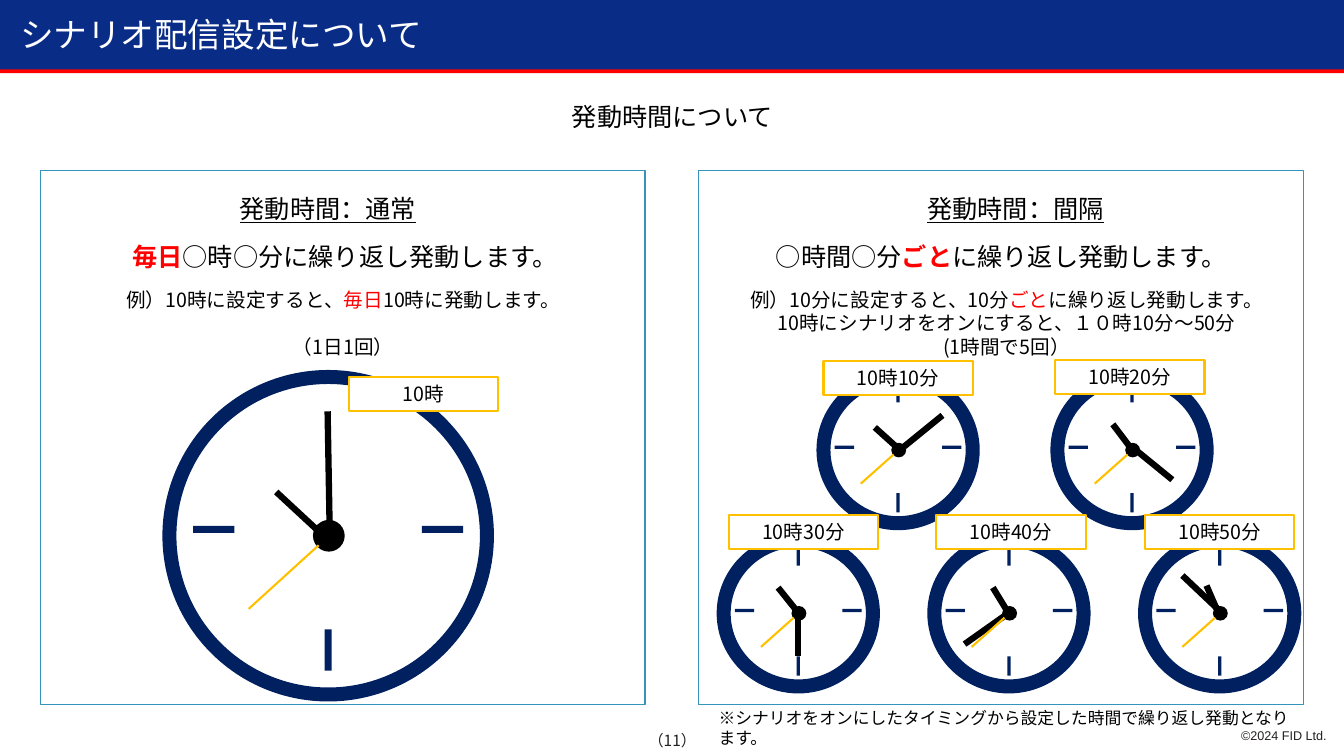
from lxml import etree
from pptx import Presentation
from pptx.dml.color import RGBColor
from pptx.enum.shapes import MSO_CONNECTOR, MSO_SHAPE
from pptx.enum.text import MSO_ANCHOR, PP_ALIGN
from pptx.oxml.ns import qn
from pptx.util import Pt

RECT, OVAL = MSO_SHAPE.RECTANGLE, MSO_SHAPE.OVAL
LINE, MIDDLE = MSO_CONNECTOR.STRAIGHT, MSO_ANCHOR.MIDDLE
LEFT, CENTER, RIGHT = PP_ALIGN.LEFT, PP_ALIGN.CENTER, PP_ALIGN.RIGHT
SANS, ARIAL = "Noto Sans CJK JP", "Arial"
COLORS = {"band": "092C87", "red": "FF0000", "frame": "3494BA", "navy": "002060",
          "gold": "FFC000", "black": "000000", "white": "FFFFFF", "grey": "231F20"}

# Content: a run is text or (text, style); styles are b = bold, u = underline, r = red
TITLE = "シナリオ配信設定について"
TOPIC = "発動時間について"
NOTE = "※シナリオをオンにしたタイミングから設定した時間で繰り返し発動となります。"
PAGE = "（11）"
RIGHTS = "©2024 FID Ltd."

# Panels: frame left, then (box left, top, width, height, size, lines)
PANELS = [
    (28.8, [
        (87.8, 134.6, 293, 28.8, 18, [[("発動時間：通常", "u")]]),
        (59, 168.5, 375.1, 28.8, 18,
         [[("毎日", "br"), "○時○分に繰り返し発動します。"]]),
        (57.6, 201.6, 375.1, 58.3, 14,
         [["例）10時に設定すると、", ("毎日", "r"), "10時に発動します。"],
          ["（1日1回）"]]),
    ]),
    (499, [
        (578.9, 134.6, 293, 28.8, 18, [[("発動時間：間隔", "u")]]),
        (531.4, 168.5, 367.9, 28.8, 18,
         [["○時間○分", ("ごと", "br"), "に繰り返し発動します。"]]),
        (520.6, 201.6, 396.7, 58.3, 14,
         [["例）10分に設定すると、10分", ("ごと", "r"), "に繰り返し発動します。"],
          ["10時にシナリオをオンにすると、１０時10分～50分"],
          ["(1時間で5回）"]]),
    ]),
]

# Clocks: label, label corner, centre, size, minute hand, hour hand (from the centre)
BIG, SMALL = (226.8, 226.8), (106.6, 104.4)
CLOCKS = [
    ("10時", (249.1, 269.3), (234.4, 382.7), BIG,
     (1.1, -4.7, -0.4, -88.9), (-37.1, -31.3, -6.8, -3.2)),
    ("10時10分", (588.2, 257.8), (641.5, 321.5), SMALL,
     (4.3, -2.5, 31.7, -24.8), (-16.6, -16.2, -2.2, -3.2)),
    ("10時20分", (753.8, 257), (808.6, 321.5), SMALL,
     (1.4, -1.1, 28.8, 21.2), (-13.7, -18.4, -2.2, -3.2)),
    ("10時30分", (520.6, 367.9), (570.2, 438.1), SMALL,
     (0, -2.5, 0, 30.6), (-14.4, -18.4, -2.2, -3.2)),
    ("10時40分", (668.9, 367.9), (720.7, 438.1), SMALL,
     (-31.7, 22, -2.2, 1.1), (-11.5, -18.4, -2.2, -3.2)),
    ("10時50分", (817.9, 367.9), (871.2, 438.1), SMALL,
     (0, -1.8, -26.6, -27), (-9.4, -19.8, -2.2, -3.2)),
]
# Ticks as shares of the radius: x, y, upright
TICKS = [(0, 0.72, True), (0.72, -0.04, False), (-0.72, -0.04, False), (0, -0.785, True)]

deck = Presentation()
deck.slide_width, deck.slide_height = Pt(960), Pt(540)
slide = deck.slides.add_slide(deck.slide_layouts[6])


def rgb(name):
    return RGBColor.from_string(COLORS[name])


def draw(home, kind, x, y, w, h, fill=None, edge=None, width=1):
    shape = home.add_shape(kind, Pt(x), Pt(y), Pt(w), Pt(h))
    shape.shadow.inherit = False
    if fill:
        shape.fill.solid()
        shape.fill.fore_color.rgb = rgb(fill)
    else:
        shape.fill.background()
    if edge:
        shape.line.color.rgb = rgb(edge)
        shape.line.width = Pt(width)
    else:
        shape.line.fill.background()
    return shape


def hand(home, mid, ends, color, width):
    (cx, cy), (x1, y1, x2, y2) = mid, ends
    line = home.add_connector(LINE, Pt(cx + x1), Pt(cy + y1), Pt(cx + x2), Pt(cy + y2))
    line.line.color.rgb = rgb(color)
    line.line.width = Pt(width)
    etree.SubElement(line._element.spPr, qn("a:effectLst"))


def write(shape, lines, size, color="black", align=CENTER, font=SANS, gap=0):
    frame = shape.text_frame
    frame.word_wrap = True
    frame.vertical_anchor = MIDDLE
    frame.margin_top = frame.margin_bottom = 0
    for i, line in enumerate(lines):
        para = frame.add_paragraph() if i else frame.paragraphs[0]
        para.alignment = align
        if i and gap:
            para.space_before = Pt(gap)
        for part in line:
            text, style = (part, "") if isinstance(part, str) else part
            run = para.add_run()
            run.text = text
            run.font.size = Pt(size)
            run.font.name = font
            run.font.bold = "b" in style
            run.font.underline = "u" in style
            run.font.color.rgb = rgb("red" if "r" in style else color)
            etree.SubElement(run._r.get_or_add_rPr(), qn("a:ea")).set("typeface", font)


def label(x, y, w, h, text, *look):
    box = slide.shapes.add_textbox(Pt(x), Pt(y), Pt(w), Pt(h))
    write(box, [[text]], *look)


def clock(mid, size, minute, hour):
    home = slide.shapes.add_group_shape().shapes
    (cx, cy), (w, h) = mid, size

    def centre(kind, x, y, wide, high, fill, *edge):
        draw(home, kind, cx + x - wide / 2, cy + y - high / 2, wide, high, fill, *edge)

    centre(OVAL, 0, 0, w, h, "white", "navy", 10)
    long, thin = 0.13 * w, 0.022 * w
    for x, y, up in TICKS[:3] if size == BIG else TICKS:
        wide, high = (thin, long) if up else (long, thin)
        centre(RECT, x * w / 2, y * h / 2, wide, high, "navy")
    centre(OVAL, 0.5, 0, 0.1 * w, 0.1 * h, "black")
    hand(home, mid, minute, "black", 4.5)
    hand(home, mid, (-0.25 * w, 0.23 * h, -0.03 * w, 0.03 * h), "gold", 1.5)
    hand(home, mid, hour, "black", 4.5)


# Header and footer
draw(slide.shapes, RECT, 0, 0, 960, 50.4, "band")
draw(slide.shapes, RECT, 0, 49.5, 960, 2.7, "red")
label(7.2, 6.5, 730.8, 36, TITLE, 24, "white", LEFT)
label(421.9, 520.5, 116.6, 16.6, PAGE, 11, "grey")
label(742.3, 521, 212.4, 9, RIGHTS, 9, "grey", RIGHT, ARIAL)
label(83.5, 69.1, 793.4, 28.8, TOPIC, 18)

# Panels
for left, boxes in PANELS:
    draw(slide.shapes, RECT, left, 121.7, 432, 381.6, None, "frame")
    for x, y, w, h, size, lines in boxes:
        box = draw(slide.shapes, RECT, x, y, w, h, "white")
        write(box, lines, size, gap=16.8 if len(lines) == 2 else 0)

# Clocks with time labels
for time, (x, y), mid, size, minute, hour in CLOCKS:
    clock(mid, size, minute, hour)
    tag = draw(slide.shapes, RECT, x, y, 106.6, 24.3, "white", "gold", 1.5)
    write(tag, [[time]], 14)

label(506.2, 501.8, 432, 36, NOTE, 12, "black", LEFT)

deck.save("out.pptx")
